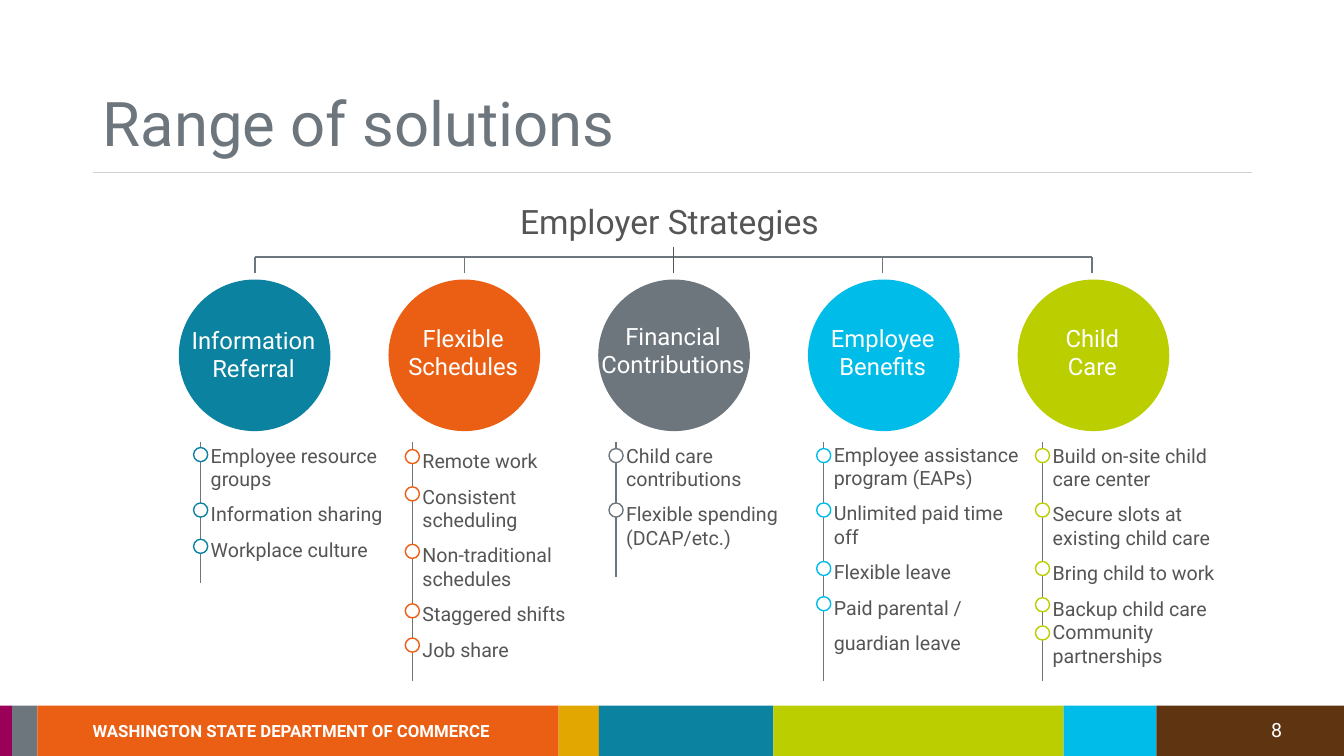
from dataclasses import dataclass
from itertools import accumulate

from lxml.etree import SubElement
from pptx import Presentation
from pptx.dml.color import RGBColor
from pptx.enum.shapes import MSO_CONNECTOR, MSO_SHAPE
from pptx.enum.text import MSO_ANCHOR, MSO_AUTO_SIZE, PP_ALIGN
from pptx.oxml.ns import qn
from pptx.util import Inches, Pt


@dataclass(frozen=True)
class Theme:
    font: str = "Roboto"
    teal: str = "0A82A0"
    orange: str = "EA5F14"
    gray: str = "6E767D"
    sky: str = "00BCE8"
    lime: str = "BBCE00"
    plum: str = "9B0059"
    gold: str = "E2A700"
    brown: str = "5E3411"
    white: str = "FFFFFF"
    ink: str = "555555"
    rule: str = "CFCFCF"
    title_size: int = 44
    heading_size: int = 24
    label_size: int = 17
    body_size: int = 14
    footer_size: int = 12


@dataclass(frozen=True)
class Strategy:
    label: tuple
    label_top: float
    color: str
    rail_x: float
    rail_bottom: float
    list_top: float
    list_width: float
    list_height: float
    items: tuple
    dot_tops: tuple


THEME = Theme()
TIGHT, OPEN = 1.0, 1.5
CIRCLE_LEFT, CIRCLE_TOP, CIRCLE_SIZE, COLUMN_STEP = 1.78, 2.78, 1.49, 2.08
LABEL_WIDTH, LABEL_HEIGHT = 1.77, 0.67
BRANCH_LEFT, BRANCH_STEP, BRANCH_TOP, BRANCH_BOTTOM = 2.53, 2.075, 2.55, 2.71
RAIL_TOP, DOT_SIZE = 4.39, 0.14
FOOTER_TOP, FOOTER_HEIGHT = 7.0, 0.5

STRATEGIES = (
    Strategy(("Information Referral",), 3.18, THEME.teal, 1.99, 5.78, 4.35, 1.91, 1.24,
             (("Employee resource", TIGHT), ("groups", TIGHT),
              ("Information sharing", OPEN), ("Workplace culture", OPEN)),
             (4.44, 4.99, 5.35)),
    Strategy(("Flexible", "Schedules"), 3.16, THEME.orange, 4.09, 6.76, 4.29, 1.91, 2.3,
             (("Remote work", OPEN), ("Consistent", OPEN), ("scheduling", TIGHT),
              ("Non-traditional", OPEN), ("schedules", TIGHT),
              ("Staggered shifts", OPEN), ("Job share", OPEN)),
             (4.46, 4.83, 5.4, 5.99, 6.33)),
    Strategy(("Financial", "Contributions"), 3.14, THEME.gray, 6.11, 5.72, 4.35, 1.91, 1.63,
             (("Child care contributions", TIGHT), ("Flexible spending", OPEN),
              ("(DCAP/etc.)", TIGHT)),
             (4.45, 4.99)),
    Strategy(("Employee", "Benefits"), 3.16, THEME.sky, 8.17, 6.76, 4.34, 2.04, 2.18,
             (("Employee assistance program (EAPs)", TIGHT), ("Unlimited paid time", OPEN),
              ("off", TIGHT), ("Flexible leave", OPEN),
              ("Paid parental / guardian leave", OPEN)),
             (4.45, 4.99, 5.57, 5.92)),
    Strategy(("Child", "Care"), 3.16, THEME.lime, 10.34, 6.76, 4.35, 2.04, 2.34,
             (("Build on-site child care center", TIGHT), ("Secure slots at", OPEN),
              ("existing child care", TIGHT), ("Bring child to work", OPEN),
              ("Backup child care", OPEN), ("Community partnerships", TIGHT)),
             (4.45, 4.99, 5.57, 5.93, 6.21)),
)

FOOTER_BANDS = (
    (0.12, THEME.plum), (0.25, THEME.gray), (5.17, THEME.orange), (0.4, THEME.gold),
    (1.73, THEME.teal), (2.88, THEME.lime), (0.92, THEME.sky), (1.86, THEME.brown),
)


def place(shape, left, top, width, height):
    shape.left, shape.top = Inches(left), Inches(top)
    shape.width, shape.height = Inches(width), Inches(height)


def write_lines(frame, lines, size, color, align=PP_ALIGN.LEFT, bold=False):
    for index, (text, spacing) in enumerate(lines):
        para = frame.paragraphs[0] if index == 0 else frame.add_paragraph()
        para.alignment = align
        para.line_spacing = spacing
        para.space_before = para.space_after = Pt(0)
        span = para.add_run()
        span.text = text
        span.font.name = THEME.font
        span.font.size = Pt(size)
        span.font.bold = bold
        span.font.color.rgb = RGBColor.from_string(color)


def add_text(page, area, lines, size, color, align=PP_ALIGN.LEFT, bold=False, wrap=False):
    box = page.shapes.add_textbox(*map(Inches, area))
    box.text_frame.word_wrap = wrap
    box.text_frame.auto_size = MSO_AUTO_SIZE.SHAPE_TO_FIT_TEXT
    write_lines(box.text_frame, [(line, TIGHT) for line in lines], size, color, align, bold)


def add_filled(page, kind, area, fill, outline=None):
    shape = page.shapes.add_shape(kind, *map(Inches, area))
    shape.shadow.inherit = False
    shape.fill.solid()
    shape.fill.fore_color.rgb = RGBColor.from_string(fill)
    if outline:
        shape.line.color.rgb = RGBColor.from_string(outline)
        shape.line.width = Pt(1)
    else:
        shape.line.fill.background()


def add_line(page, start, end, color):
    line = page.shapes.add_connector(MSO_CONNECTOR.STRAIGHT, *map(Inches, start + end))
    line.line.color.rgb = RGBColor.from_string(color)
    line.line.width = Pt(1)
    SubElement(line._element.spPr, qn("a:effectLst"))


def fill_title(page, text):
    title = page.shapes.title
    place(title, 0.92, 0.31, 11.5, 1.33)
    title.text_frame.auto_size = MSO_AUTO_SIZE.NONE
    title.text_frame.vertical_anchor = MSO_ANCHOR.BOTTOM
    write_lines(title.text_frame, [(text, 0.9)], THEME.title_size, THEME.gray)
    add_line(page, (0.92, 1.71), (12.42, 1.71), THEME.rule)


def add_footer(page):
    rights = accumulate(width for width, color in FOOTER_BANDS)
    for (width, color), right in zip(FOOTER_BANDS, rights):
        add_filled(page, MSO_SHAPE.RECTANGLE,
                   (right - width, FOOTER_TOP, width, FOOTER_HEIGHT), color)
    add_text(page, (0.82, 7.1, 4.23, 0.3), ["WASHINGTON STATE DEPARTMENT OF COMMERCE"],
             THEME.footer_size, THEME.white, bold=True)
    add_text(page, (12.51, 7.07, 0.44, 0.34), ["8"], THEME.body_size, THEME.white)


def add_branches(page):
    stems = [BRANCH_LEFT + BRANCH_STEP * index for index in range(len(STRATEGIES))]
    middle = len(stems) // 2
    add_line(page, (stems[0], BRANCH_TOP), (stems[-1], BRANCH_TOP), THEME.gray)
    for index, x in enumerate(stems):
        top, color = (2.45, THEME.ink) if index == middle else (BRANCH_TOP, THEME.gray)
        add_line(page, (x, top), (x, BRANCH_BOTTOM), color)


def fill_list(body, strategy):
    place(body, strategy.rail_x, strategy.list_top, strategy.list_width, strategy.list_height)
    frame = body.text_frame
    frame.word_wrap = True
    frame.auto_size = MSO_AUTO_SIZE.NONE
    frame.vertical_anchor = MSO_ANCHOR.TOP
    write_lines(frame, strategy.items, THEME.body_size, THEME.ink)
    for para in frame.paragraphs:
        properties = para._p.get_or_add_pPr()
        properties.set("marL", "0")
        properties.set("indent", "0")
        SubElement(properties, qn("a:buNone"))


def add_strategy(page, index, strategy, body):
    left = CIRCLE_LEFT + COLUMN_STEP * index
    add_filled(page, MSO_SHAPE.OVAL, (left, CIRCLE_TOP, CIRCLE_SIZE, CIRCLE_SIZE),
               strategy.color, strategy.color)
    add_text(page, (left - 0.15, strategy.label_top, LABEL_WIDTH, LABEL_HEIGHT),
             strategy.label, THEME.label_size, THEME.white, PP_ALIGN.CENTER, wrap=True)
    add_line(page, (strategy.rail_x, RAIL_TOP), (strategy.rail_x, strategy.rail_bottom),
             THEME.gray)
    fill_list(body, strategy)
    for top in strategy.dot_tops:
        add_filled(page, MSO_SHAPE.OVAL,
                   (strategy.rail_x - DOT_SIZE / 2, top, DOT_SIZE, DOT_SIZE),
                   THEME.white, strategy.color)


def main():
    deck = Presentation()
    deck.slide_width, deck.slide_height = Inches(13.33), Inches(7.5)
    layout = deck.slide_layouts[1]
    page = deck.slides.add_slide(layout)
    for _ in STRATEGIES[1:]:
        page.shapes.clone_placeholder(layout.placeholders[1])
    bodies = [shape for shape in page.placeholders if shape.placeholder_format.idx == 1]
    fill_title(page, "Range of solutions")
    add_footer(page)
    add_text(page, (5.06, 1.94, 3.21, 0.5), ["Employer Strategies"],
             THEME.heading_size, THEME.ink)
    add_branches(page)
    for index, (strategy, body) in enumerate(zip(STRATEGIES, bodies)):
        add_strategy(page, index, strategy, body)
    deck.save("out.pptx")


if __name__ == "__main__":
    main()
